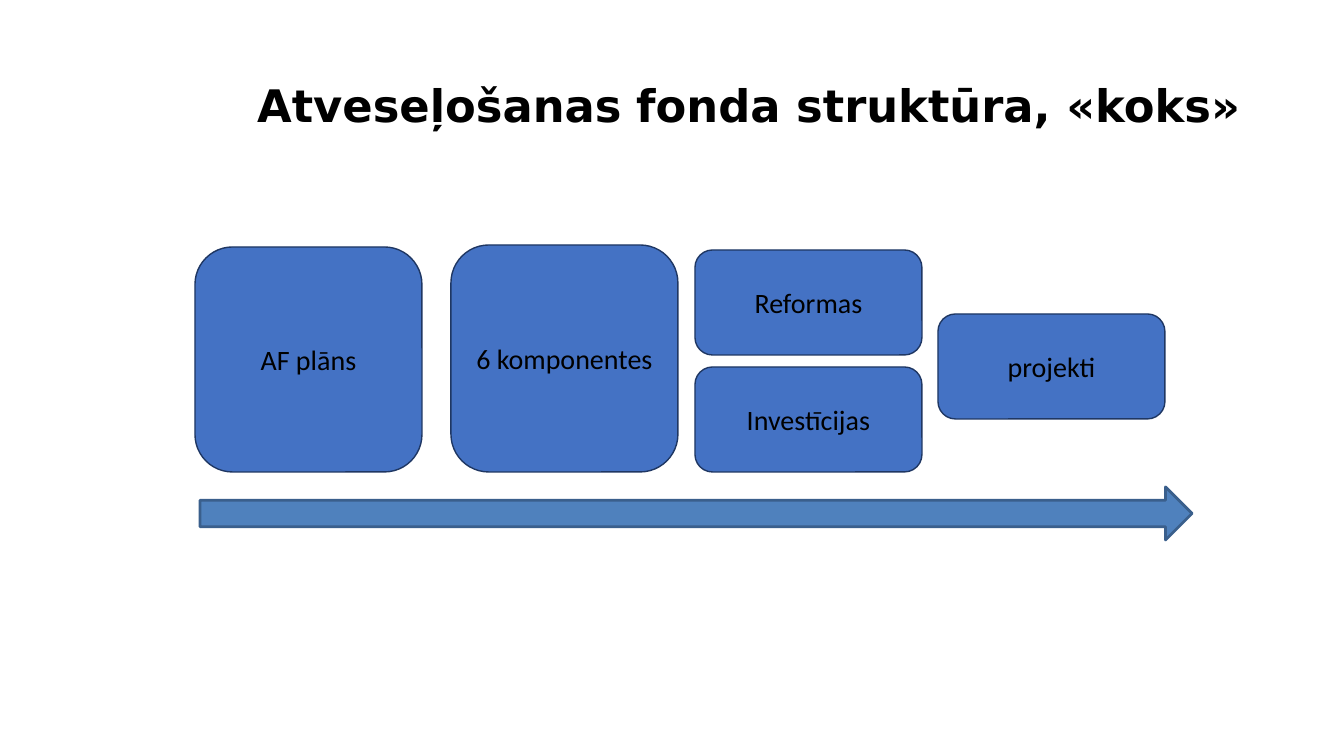
from pptx import Presentation
from pptx.dml.color import RGBColor
from pptx.enum.shapes import MSO_SHAPE as Shape
from pptx.enum.text import MSO_ANCHOR as Anchor, PP_ALIGN as Align
from pptx.util import Pt

PX = 914400 / 100.8
BLACK = RGBColor(0x00, 0x00, 0x00)
BOX_FILL = RGBColor(0x44, 0x72, 0xC4)
BOX_LINE = RGBColor(0x1F, 0x37, 0x63)
ARROW_FILL = RGBColor(0x4F, 0x81, 0xBD)
ARROW_LINE = RGBColor(0x3A, 0x5F, 0x8C)

BOX_WIDTH = 227
SMALL_HEIGHT = 105


def px(*lengths):
    return [round(length * PX) for length in lengths]


def add_text(shape, runs):
    frame = shape.text_frame
    frame.word_wrap = True
    frame.vertical_anchor = Anchor.MIDDLE
    paragraph = frame.paragraphs[0]
    paragraph.alignment = Align.CENTER
    for text, font_name, size, bold in runs:
        run = paragraph.add_run()
        run.text = text
        run.font.name = font_name
        run.font.size = Pt(size)
        run.font.bold = bold
        run.font.color.rgb = BLACK


presentation = Presentation()
presentation.slide_width, presentation.slide_height = px(1344, 756)
slide = presentation.slides.add_slide(presentation.slide_layouts[6])

title = slide.shapes.add_textbox(*px(195, 27, 1108, 146))
add_text(title, [
    ("Atveseļošanas", "DejaVu Sans", 32, True),
    (" ", "Times New Roman", 40, False),
    ("fonda struktūra, «koks»", "DejaVu Sans", 32, True),
])

boxes = [
    ("AF plāns", 195, 247, 225),
    ("6 komponentes", 451, 245, 227),
    ("Reformas", 695, 250, SMALL_HEIGHT),
    ("Investīcijas", 695, 367, SMALL_HEIGHT),
    ("projekti", 938, 314, SMALL_HEIGHT),
]
for label, left, top, height in boxes:
    box = slide.shapes.add_shape(Shape.ROUNDED_RECTANGLE, *px(left, top, BOX_WIDTH, height))
    box.shadow.inherit = False
    box.fill.solid()
    box.fill.fore_color.rgb = BOX_FILL
    box.line.color.rgb = BOX_LINE
    box.line.width = Pt(1)
    add_text(box, [(label, "Calibri", 20, False)])

arrow = slide.shapes.add_shape(Shape.RIGHT_ARROW, *px(200, 487, 992, 53))
arrow.shadow.inherit = False
arrow.fill.solid()
arrow.fill.fore_color.rgb = ARROW_FILL
arrow.line.color.rgb = ARROW_LINE
arrow.line.width = Pt(2)

presentation.save("out.pptx")
